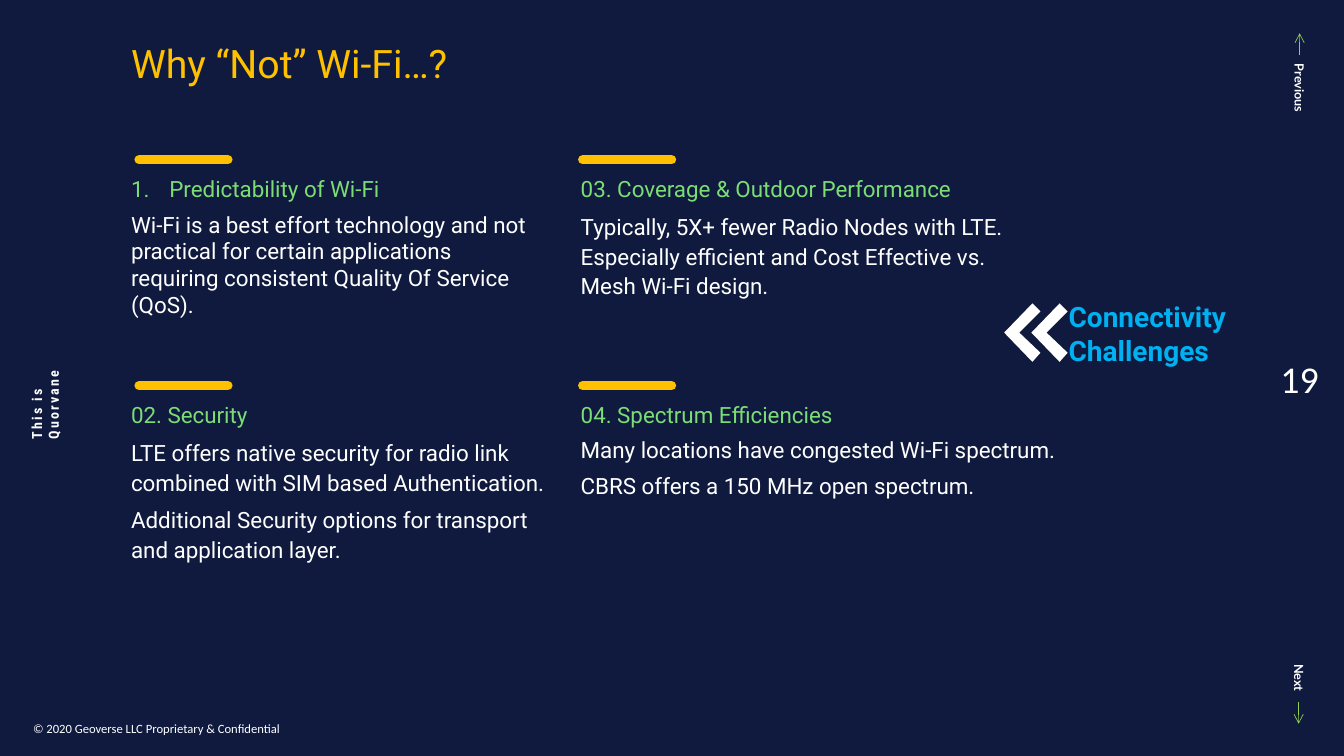
from lxml.etree import SubElement
from pptx import Presentation
from pptx.dml.color import RGBColor
from pptx.enum.shapes import MSO_CONNECTOR as CONNECTOR
from pptx.enum.text import MSO_ANCHOR as ANCHOR, MSO_AUTO_SIZE as AUTO_SIZE, PP_ALIGN as ALIGN
from pptx.oxml.ns import qn
from pptx.util import Inches, Pt

NAVY, WHITE, GREEN, AMBER = "0F1A3E", "FFFFFF", "7CDD75", "FFC000"
ARROW_GREEN, BLUE = "92D050", "00B0F0"

# Heading, heading is auto-numbered, body paragraphs, and spacing
# (space before, space after, line spacing) of heading and body
TOPICS = [
    ("Predictability of Wi-Fi", True,
     ["Wi-Fi is a best effort technology and not practical for certain applications "
      "requiring consistent Quality Of Service (QoS)."],
     (0, 6, 1.0), (0, 6, 1.0)),
    ("02. Security", False,
     ["LTE offers native security for radio link combined with SIM based Authentication.",
      "Additional Security options for transport and application layer."],
     (0, 0, 1.0), (6, 0, 1.1)),
    ("03. Coverage & Outdoor Performance", False,
     ["Typically, 5X+ fewer Radio Nodes with LTE.",
      "Especially efficient and Cost Effective vs. Mesh Wi-Fi design."],
     (0, 6, 1.0), (0, 0, 1.1)),
    ("04. Spectrum Efficiencies", False,
     ["Many locations have congested Wi-Fi spectrum.",
      "CBRS offers a 150 MHz open spectrum."],
     (0, 6, 1.0), (0, 6, 1.0)),
]
# Text left, top and width, then the left end of the bar
TOPIC_PLACES = [(1.2, 1.69, 4.2, 1.38), (1.2, 3.93, 4.38, 1.38),
                (5.66, 1.69, 4.52, 5.78), (5.66, 3.93, 5.05, 5.78)]


def rgb(color):
    return RGBColor.from_string(color)


def place(sp, left, top, width, height):
    sp.left, sp.top = Inches(left), Inches(top)
    sp.width, sp.height = Inches(width), Inches(height)


def format_runs(p, size, font, color, bold=False):
    for r in p.runs:
        r.font.size, r.font.name, r.font.bold = Pt(size), font, bold
        r.font.color.rgb = rgb(color)


def set_bullet(p, numbered=False):
    pPr = p._p.get_or_add_pPr()
    indent = Inches(0.38) if numbered else 0
    pPr.set("marL", str(indent))
    pPr.set("indent", str(-indent))
    if numbered:
        SubElement(pPr, qn("a:buFont"), typeface="+mj-lt")
        SubElement(pPr, qn("a:buAutoNum"), type="arabicPeriod")
    else:
        SubElement(pPr, qn("a:buNone"))


def set_spacing(p, before, after, line):
    p.space_before, p.space_after, p.line_spacing = Pt(before), Pt(after), line


def add_label(s, box, text, size, font, color, bold=False, rotation=0,
              wrap=True, anchor=ANCHOR.TOP, align=ALIGN.LEFT):
    sp = s.shapes.add_textbox(*map(Inches, box))
    sp.rotation = rotation
    tf = sp.text_frame
    tf.word_wrap, tf.vertical_anchor = wrap, anchor
    tf.text = text
    for p in tf.paragraphs:
        p.alignment = align
        format_runs(p, size, font, color, bold)
    return sp


def add_line(s, start, end, color, width, arrow=False):
    sp = s.shapes.add_connector(CONNECTOR.STRAIGHT, *map(Inches, start + end))
    sp.line.color.rgb = rgb(color)
    sp.line.width = Pt(width)
    ln = sp.line._get_or_add_ln()
    if arrow:
        SubElement(ln, qn("a:tailEnd"), type="arrow")
    else:
        ln.set("cap", "rnd")
    SubElement(sp._element.spPr, qn("a:effectLst"))


def add_double_chevron(s, left, top, step):
    outline = [(0.28, 0), (0, 0.29), (0.28, 0.58), (0.36, 0.49), (0.15, 0.29), (0.36, 0.08)]
    chevrons = [[(Inches(left + shift + x), Inches(top + y)) for x, y in outline]
                for shift in (0, step)]
    builder = s.shapes.build_freeform(*chevrons[0][0])
    builder.add_line_segments(chevrons[0][1:], close=True)
    builder.move_to(*chevrons[1][0])
    builder.add_line_segments(chevrons[1][1:], close=True)
    sp = builder.convert_to_shape()
    sp.shadow.inherit = False
    sp.fill.solid()
    sp.fill.fore_color.rgb = rgb(WHITE)
    sp.line.fill.background()


def fill_title(sp, text):
    place(sp, 1.2, 0.29, 10.21, 0.58)
    tf = sp.text_frame
    tf.text = text
    tf.word_wrap, tf.vertical_anchor, tf.auto_size = True, ANCHOR.TOP, AUTO_SIZE.NONE
    p = tf.paragraphs[0]
    p.alignment = ALIGN.LEFT
    set_spacing(p, 0, 0, 1.1)
    format_runs(p, 28, "Roboto", AMBER)


def fill_topic(s, sp, topic, spot):
    heading, numbered, body, heading_spacing, body_spacing = topic
    left, top, width, bar_left = spot
    place(sp, left, top, width, 1.9)
    tf = sp.text_frame
    tf.text = "\n".join([heading] + body)
    tf.word_wrap, tf.vertical_anchor, tf.auto_size = True, ANCHOR.TOP, AUTO_SIZE.NONE
    for i, p in enumerate(tf.paragraphs):
        set_bullet(p, numbered and i == 0)
        set_spacing(p, *(body_spacing if i else heading_spacing))
        p.alignment = ALIGN.LEFT
        format_runs(p, 16, "Roboto", WHITE if i else GREEN)
    bar_y = top - 0.105
    add_line(s, (bar_left, bar_y), (bar_left + 0.88, bar_y), AMBER, 6.75)


def add_frame(s):
    # Navigation on the right edge
    add_label(s, (12.54, 0.76, 0.7, 0.25), "Previous", 9, "Lato", WHITE, True, 90, wrap=False)
    add_line(s, (12.89, 0.55), (12.89, 0.33), ARROW_GREEN, 0.5, arrow=True)
    add_label(s, (12.64, 6.61, 0.49, 0.25), "Next", 9, "Lato", WHITE, True, 90, wrap=False)
    add_line(s, (12.88, 6.96), (12.88, 7.18), ARROW_GREEN, 0.5, arrow=True)
    add_label(s, (12.5, 2.83, 0.78, 1.84), "19", 27, "Calibri", WHITE,
              wrap=False, anchor=ANCHOR.MIDDLE, align=ALIGN.CENTER)
    # Tagline on the left edge
    tagline = add_label(s, (-0.03, 3.76, 0.95, 0.44), "This is Quorvane", 10,
                        "Roboto Condensed", WHITE, True, 270, anchor=ANCHOR.MIDDLE)
    tagline.text_frame.paragraphs[0].runs[0].font._element.set("spc", "150")
    # Copyright line
    add_label(s, (0.23, 6.95, 3.97, 0.4), "© 2020 Geoverse LLC Proprietary & Confidential",
              9, "Calibri", WHITE, anchor=ANCHOR.BOTTOM)


def main():
    prs = Presentation()
    prs.slide_width, prs.slide_height = Inches(13.33), Inches(7.5)
    # The comparison layout has a title and four text placeholders
    s = prs.slides.add_slide(prs.slide_layouts[4])
    s.background.fill.solid()
    s.background.fill.fore_color.rgb = rgb(NAVY)

    add_frame(s)
    fill_title(s.shapes.title, "Why “Not” Wi-Fi…?")
    for idx, (topic, spot) in enumerate(zip(TOPICS, TOPIC_PLACES), start=1):
        fill_topic(s, s.placeholders[idx], topic, spot)

    # Callout
    add_label(s, (10.5, 2.92, 2.09, 0.77), "Connectivity\nChallenges", 20, "Roboto",
              BLUE, True, anchor=ANCHOR.MIDDLE)
    add_double_chevron(s, 9.96, 3.01, 0.27)

    prs.save("out.pptx")


if __name__ == "__main__":
    main()
